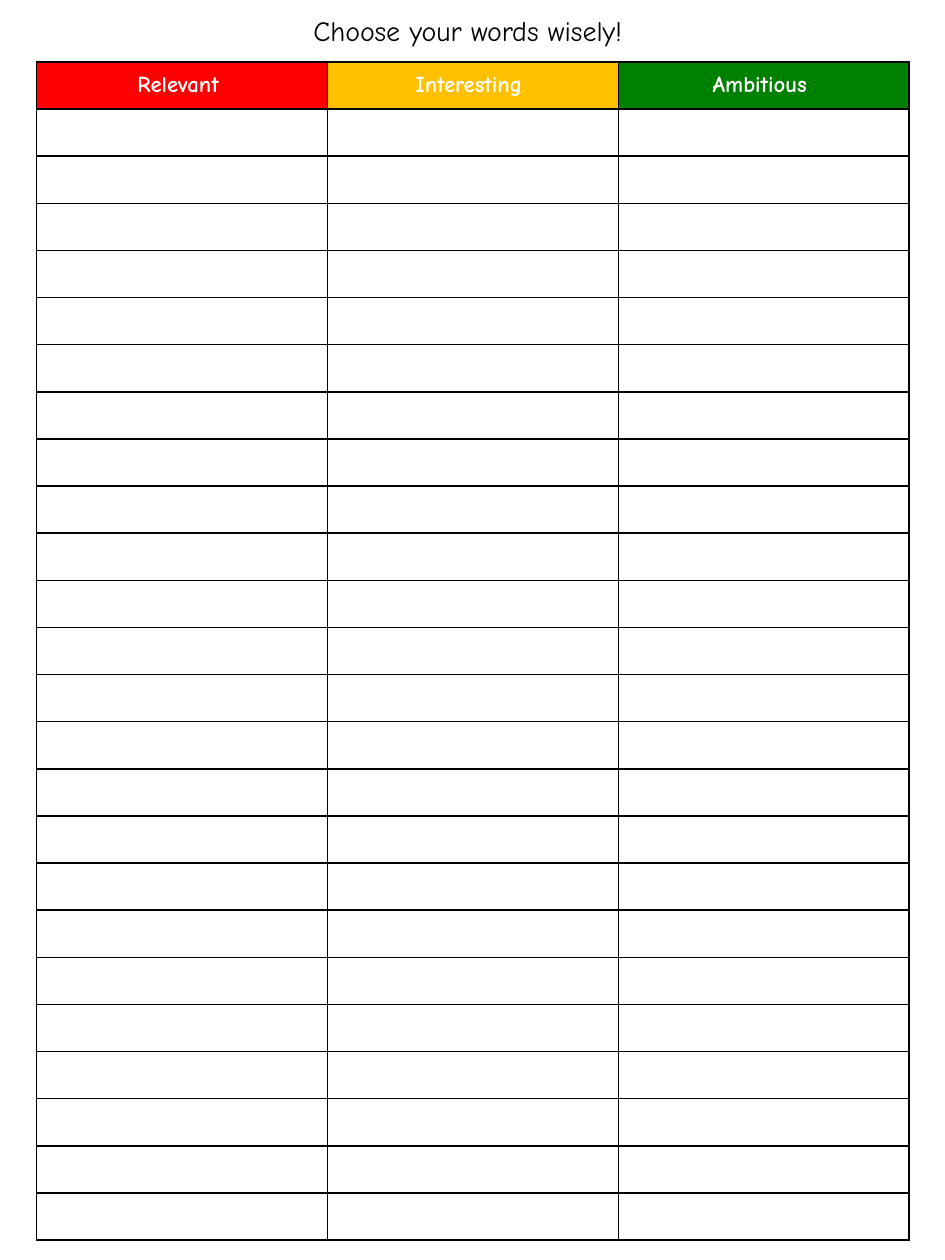
from dataclasses import dataclass

from lxml.etree import SubElement
from pptx import Presentation
from pptx.dml.color import RGBColor
from pptx.enum.text import MSO_ANCHOR as Anchor, MSO_AUTO_SIZE as AutoSize, PP_ALIGN as Align
from pptx.oxml.ns import qn
from pptx.table import _Cell as Cell
from pptx.util import Pt

FONT = "Comic Neue"
BODY_ROWS = 24
COL_WIDTH = 166.25
ROW_HEIGHT = 26.95


@dataclass
class Heading:
    text: str
    fill: str


HEADINGS = [
    Heading("Relevant ", "FF0000"),
    Heading("Interesting ", "FFC000"),
    Heading("Ambitious ", "008000"),
]


def rgb(value: str) -> RGBColor:
    return RGBColor.from_string(value)


def set_all(target, values: dict) -> None:
    for name, value in values.items():
        setattr(target, name, value)


def write(tf, text: str, size: float, color: str, bold: bool) -> None:
    p = tf.paragraphs[0]
    p.alignment = Align.CENTER
    r = p.add_run()
    r.text = text
    set_all(r.font, {"name": FONT, "size": Pt(size), "bold": bold})
    r.font.color.rgb = rgb(color)


def format_cell(cell: Cell, fill: str) -> None:
    tc_pr = cell._tc.get_or_add_tcPr()
    for side in ("a:lnL", "a:lnR", "a:lnT", "a:lnB"):
        ln = SubElement(tc_pr, qn(side), w=str(Pt(1)))
        solid = SubElement(ln, qn("a:solidFill"))
        SubElement(solid, qn("a:srgbClr"), val="000000")
    cell.fill.solid()
    cell.fill.fore_color.rgb = rgb(fill)
    set_all(cell, {
        "vertical_anchor": Anchor.MIDDLE,
        "margin_left": Pt(7.2), "margin_right": Pt(7.2),
        "margin_top": Pt(3.6), "margin_bottom": Pt(3.6),
    })


def add_title(s, text: str) -> None:
    sp = s.shapes.title
    set_all(sp, {"left": Pt(163.4), "top": Pt(4.3), "width": Pt(213.1), "height": Pt(26.6)})
    tf = sp.text_frame
    set_all(tf, {
        "word_wrap": False,
        "auto_size": AutoSize.SHAPE_TO_FIT_TEXT,
        "vertical_anchor": Anchor.TOP,
    })
    write(tf, text, 16, "000000", False)


def add_word_table(s, headings: list[Heading]) -> None:
    n_rows, n_cols = BODY_ROWS + 1, len(headings)
    frame = s.shapes.add_table(
        n_rows, n_cols, Pt(20.9), Pt(35.4),
        Pt(COL_WIDTH * n_cols), Pt(ROW_HEIGHT * n_rows))
    table = frame.table
    set_all(table, {"first_row": False, "horz_banding": False})
    for column in table.columns:
        column.width = Pt(COL_WIDTH)
    for row in table.rows:
        row.height = Pt(ROW_HEIGHT)
    for i, heading in enumerate(headings):
        header = table.cell(0, i)
        format_cell(header, heading.fill)
        write(header.text_frame, heading.text, 13, "FFFFFF", True)
        for j in range(1, n_rows):
            cell = table.cell(j, i)
            format_cell(cell, "FFFFFF")
            p = cell.text_frame.paragraphs[0]
            SubElement(p._p, qn("a:endParaRPr"), sz="1300")


def main() -> None:
    prs = Presentation()
    set_all(prs, {"slide_width": Pt(540), "slide_height": Pt(720)})
    s = prs.slides.add_slide(prs.slide_layouts[5])
    add_word_table(s, HEADINGS)
    add_title(s, "Choose your words wisely! ")
    prs.save("out.pptx")


if __name__ == "__main__":
    main()
